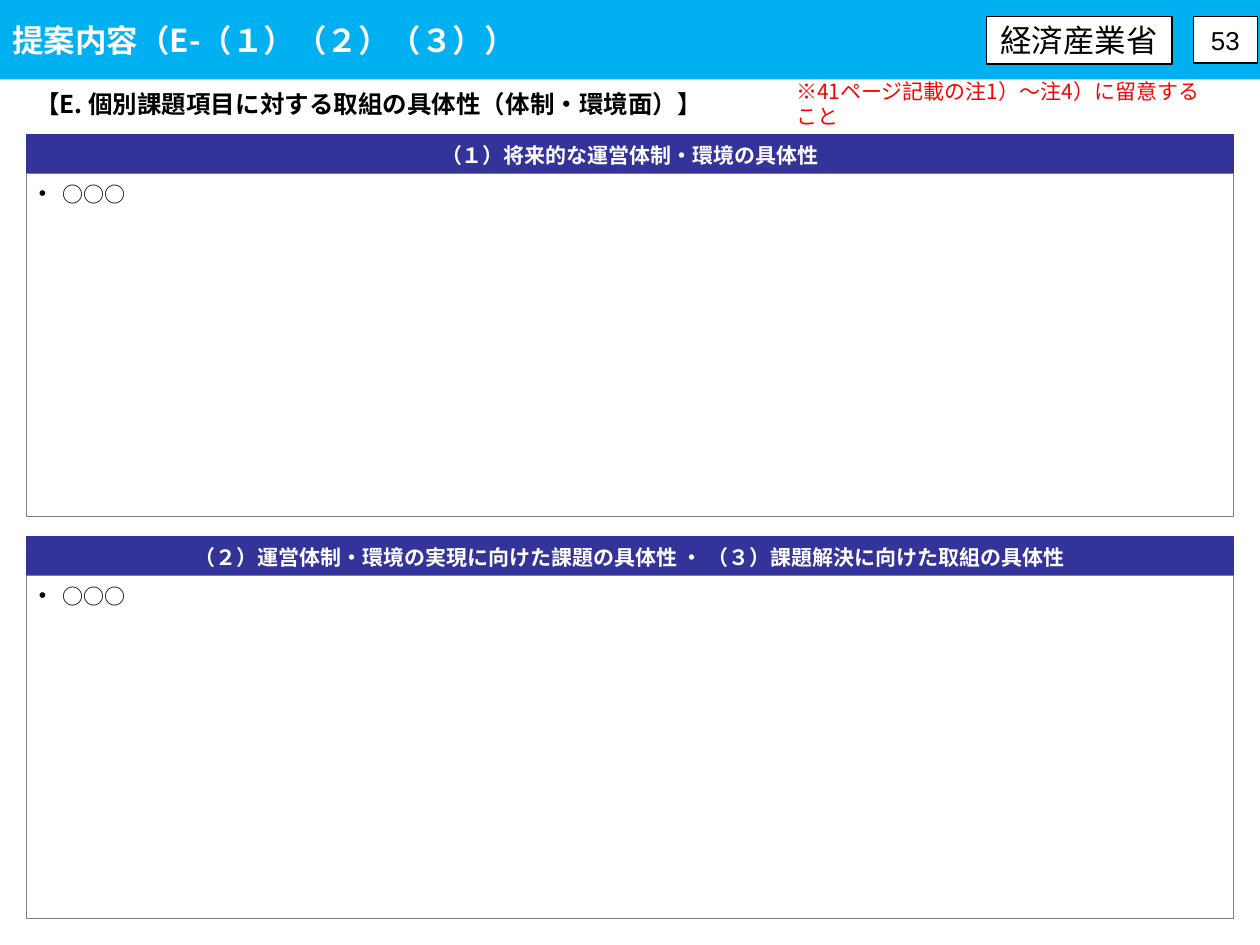
"""Build the proposal slide with its title band and two titled answer boxes."""
from lxml import etree
from pptx import Presentation
from pptx.dml.color import RGBColor
from pptx.enum.shapes import MSO_SHAPE as SHAPE
from pptx.enum.text import MSO_ANCHOR as ANCHOR, PP_ALIGN as ALIGN
from pptx.oxml.ns import qn
from pptx.util import Inches, Pt

CJK = "Noto Sans CJK JP"


def rgb(value):
    return RGBColor.from_string(value)


def add_box(at, text, size, color="000000", font=CJK, fill=None, line=None,
            anchor=ANCHOR.MIDDLE, align=ALIGN.LEFT, bold=False, spacing=None):
    box = [Inches(v) for v in at]
    if fill or line:
        sp = s.shapes.add_shape(SHAPE.RECTANGLE, *box)
        sp.shadow.inherit = False
        if fill:
            sp.fill.solid()
            sp.fill.fore_color.rgb = rgb(fill)
        else:
            sp.fill.background()
        if line:
            sp.line.color.rgb = rgb(line[0])
            sp.line.width = Pt(line[1])
        else:
            sp.line.fill.background()
    else:
        sp = s.shapes.add_textbox(*box)
    tf = sp.text_frame
    tf.word_wrap = True
    tf.vertical_anchor = anchor
    p = tf.paragraphs[0]
    p.alignment = align
    if spacing:
        p.line_spacing = Pt(spacing)
    r = p.add_run()
    r.text = text
    formats = {"name": font, "size": Pt(size), "bold": bold}
    for key, value in formats.items():
        setattr(r.font, key, value)
    r.font.color.rgb = rgb(color)
    etree.SubElement(r._r.get_or_add_rPr(), qn("a:ea"), typeface=CJK)
    return sp


prs = Presentation()
prs.slide_width, prs.slide_height = Inches(10), Inches(7.5)
s = prs.slides.add_slide(prs.slide_layouts[6])

add_box((0, 0, 10, 0.63), "提案内容（E-（１）（２）（３））", 18, "FFFFFF",
        fill="00B0F0", bold=True)
add_box((7.83, 0.13, 1.47, 0.38), "経済産業省", 18, font="Arial",
        fill="FFFFFF", line=("000000", 1), align=ALIGN.CENTER)
add_box((9.47, 0.13, 0.51, 0.37), "53", 14.8, font="Arial",
        fill="FFFFFF", line=("000000", 0.75), align=ALIGN.CENTER)
add_box((0.18, 0.66, 5.69, 0.34),
        "【E. 個別課題項目に対する取組の具体性（体制・環境面）】", 14,
        anchor=ANCHOR.TOP, bold=True)
add_box((6.22, 0.67, 3.56, 0.31),
        "※41ページ記載の注1）～注4）に留意すること", 12, "FF0000")

left, width, head, body = 0.21, 9.58, 0.31, 2.72
sections = [
    (1.07, "（１）将来的な運営体制・環境の具体性"),
    (4.26, "（２）運営体制・環境の実現に向けた課題の具体性 ・ （３）課題解決に向けた取組の具体性"),
]
for top, title in sections:
    add_box((left, top, width, head), title, 12, "FFFFFF", "Arial", "333399",
            ("333399", 0.5), align=ALIGN.CENTER, bold=True, spacing=15)
    sp = add_box((left, top + head, width, body), "○○○", 12,
                 line=("808080", 0.5), anchor=ANCHOR.TOP, spacing=15)
    pPr = sp.text_frame.paragraphs[0]._p.get_or_add_pPr()
    pPr.set("marL", str(Inches(0.19)))
    pPr.set("indent", str(-Inches(0.19)))
    etree.SubElement(pPr, qn("a:buFont"), typeface="Arial")
    etree.SubElement(pPr, qn("a:buChar"), char="•")

prs.save("out.pptx")
